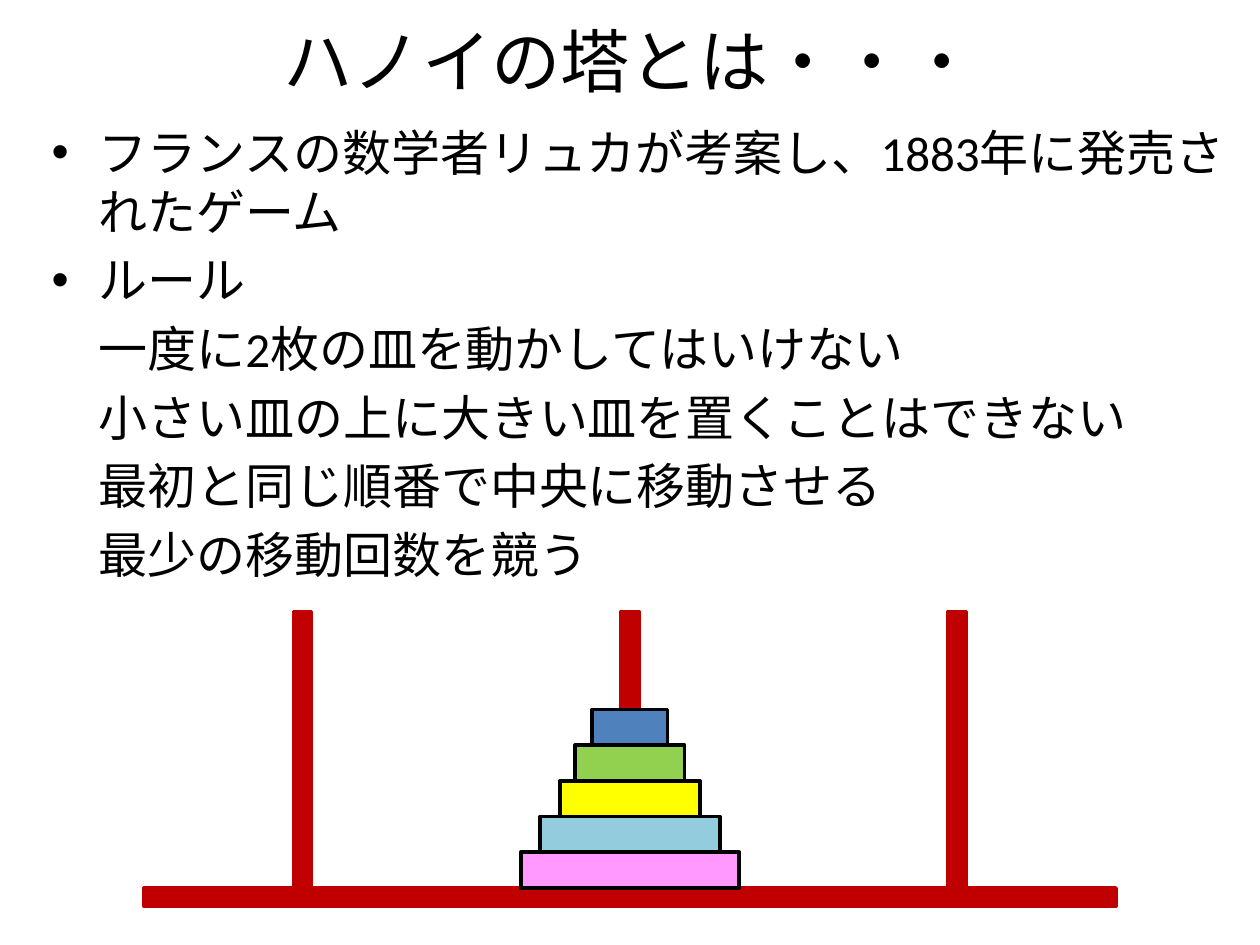
"""Build the slide that explains the Tower of Hanoi."""
from lxml.etree import SubElement
from pptx import Presentation
from pptx.dml.color import RGBColor
from pptx.enum.shapes import MSO_SHAPE as Shape
from pptx.enum.text import MSO_ANCHOR as Anchor, PP_ALIGN as Align
from pptx.oxml.ns import qn
from pptx.util import Cm, Pt

BLACK = RGBColor(0x00, 0x00, 0x00)
RED = RGBColor(0xC0, 0x00, 0x00)
PINK = RGBColor(0xFF, 0x99, 0xFF)
AQUA = RGBColor(0x93, 0xCD, 0xDD)
YELLOW = RGBColor(0xFF, 0xFF, 0x00)
GREEN = RGBColor(0x92, 0xD0, 0x50)
BLUE = RGBColor(0x4F, 0x81, 0xBD)

TITLE = "ハノイの塔とは・・・"
BULLETS = ["フランスの数学者リュカが考案し、1883年に発売されたゲーム", "ルール"]
RULES = [
    "一度に2枚の皿を動かしてはいけない",
    "小さい皿の上に大きい皿を置くことはできない",
    "最初と同じ順番で中央に移動させる",
    "最少の移動回数を競う",
]
DISCS = [(4.4, PINK), (3.63, AQUA), (2.82, YELLOW), (2.21, GREEN), (1.52, BLUE)]

CENTER = 12.7
BASE_TOP = 17.9
BAR = 0.37
POST_HEIGHT = 5.57
POST_GAP = 6.6
DISC_HEIGHT = 0.72
INDENT = 0.95


def set_format(target, values):
    """Set each named attribute of the target."""
    for name, value in values.items():
        setattr(target, name, value)


def add_frame(slide, left, top, width, height, anchor):
    """Add a wrapping text box and return its text frame."""
    box = slide.shapes.add_textbox(Cm(left), Cm(top), Cm(width), Cm(height))
    set_format(box.text_frame, {"word_wrap": True, "vertical_anchor": anchor})
    return box.text_frame


def write(paragraph, text, size, values):
    """Write one run of text and format its paragraph."""
    set_format(paragraph, values)
    run = paragraph.add_run()
    run.text = text
    set_format(run.font, {"name": "Calibri", "size": Pt(size)})
    run.font.color.rgb = BLACK


def indent(paragraph, bulleted):
    """Indent a paragraph, with a hanging bullet if asked."""
    properties = paragraph._p.get_or_add_pPr()
    properties.set("marL", str(Cm(INDENT)))
    properties.set("indent", str(-Cm(INDENT) if bulleted else 0))
    if bulleted:
        SubElement(properties, qn("a:buFont"), typeface="Arial")
        SubElement(properties, qn("a:buChar"), char="•")
    else:
        SubElement(properties, qn("a:buNone"))


def add_body(slide):
    """Add the bullets and the rules below them."""
    frame = add_frame(slide, 0.79, 2.34, 24.2, 9.8, Anchor.TOP)
    for index, text in enumerate(BULLETS + RULES):
        paragraph = frame.add_paragraph() if index else frame.paragraphs[0]
        write(paragraph, text, 28, {"space_before": Pt(5.6)})
        indent(paragraph, index < len(BULLETS))


def add_block(slide, center, top, width, height, fill, line):
    """Add a rectangle centred on a vertical axis."""
    shape = slide.shapes.add_shape(
        Shape.RECTANGLE, Cm(center - width / 2), Cm(top), Cm(width), Cm(height))
    shape.shadow.inherit = False
    shape.fill.solid()
    shape.fill.fore_color.rgb = fill
    shape.line.color.rgb = line
    shape.line.width = Pt(2)


def add_tower(slide):
    """Add the base, the three posts and the stacked discs."""
    add_block(slide, CENTER, BASE_TOP, 19.6, BAR, RED, RED)
    for step in (-1, 0, 1):
        add_block(slide, CENTER + step * POST_GAP, BASE_TOP - POST_HEIGHT,
                  BAR, POST_HEIGHT, RED, RED)
    for level, (width, color) in enumerate(DISCS, start=1):
        add_block(slide, CENTER, BASE_TOP - level * DISC_HEIGHT,
                  width, DISC_HEIGHT, color, BLACK)


def main():
    """Build and save the presentation."""
    presentation = Presentation()
    set_format(presentation, {"slide_width": Cm(25.4), "slide_height": Cm(19.05)})
    slide = presentation.slides.add_slide(presentation.slide_layouts[6])
    title = add_frame(slide, 1.27, 0.33, 22.86, 1.75, Anchor.MIDDLE)
    write(title.paragraphs[0], TITLE, 39.6, {"alignment": Align.CENTER})
    add_body(slide)
    add_tower(slide)
    presentation.save("out.pptx")


if __name__ == "__main__":
    main()
